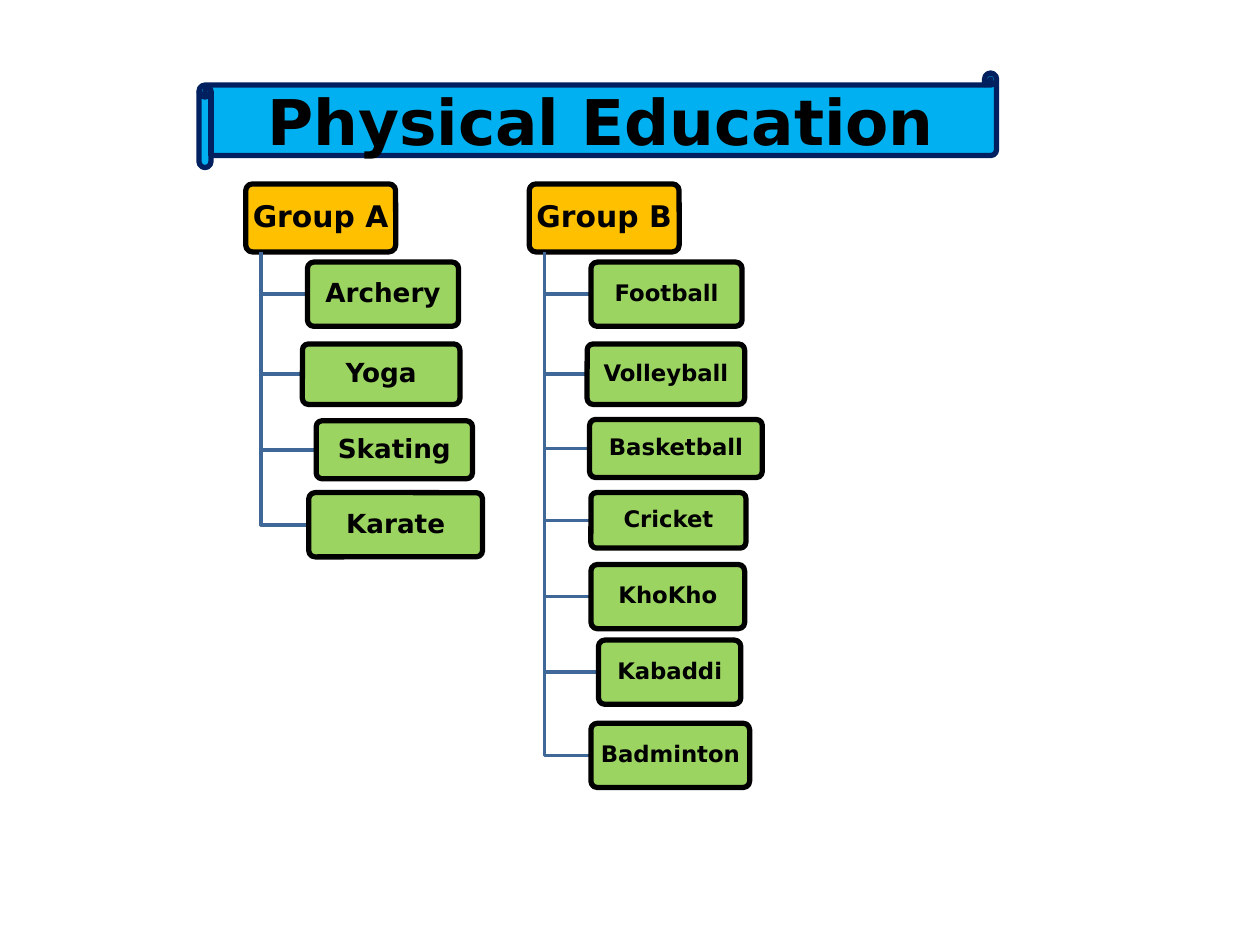
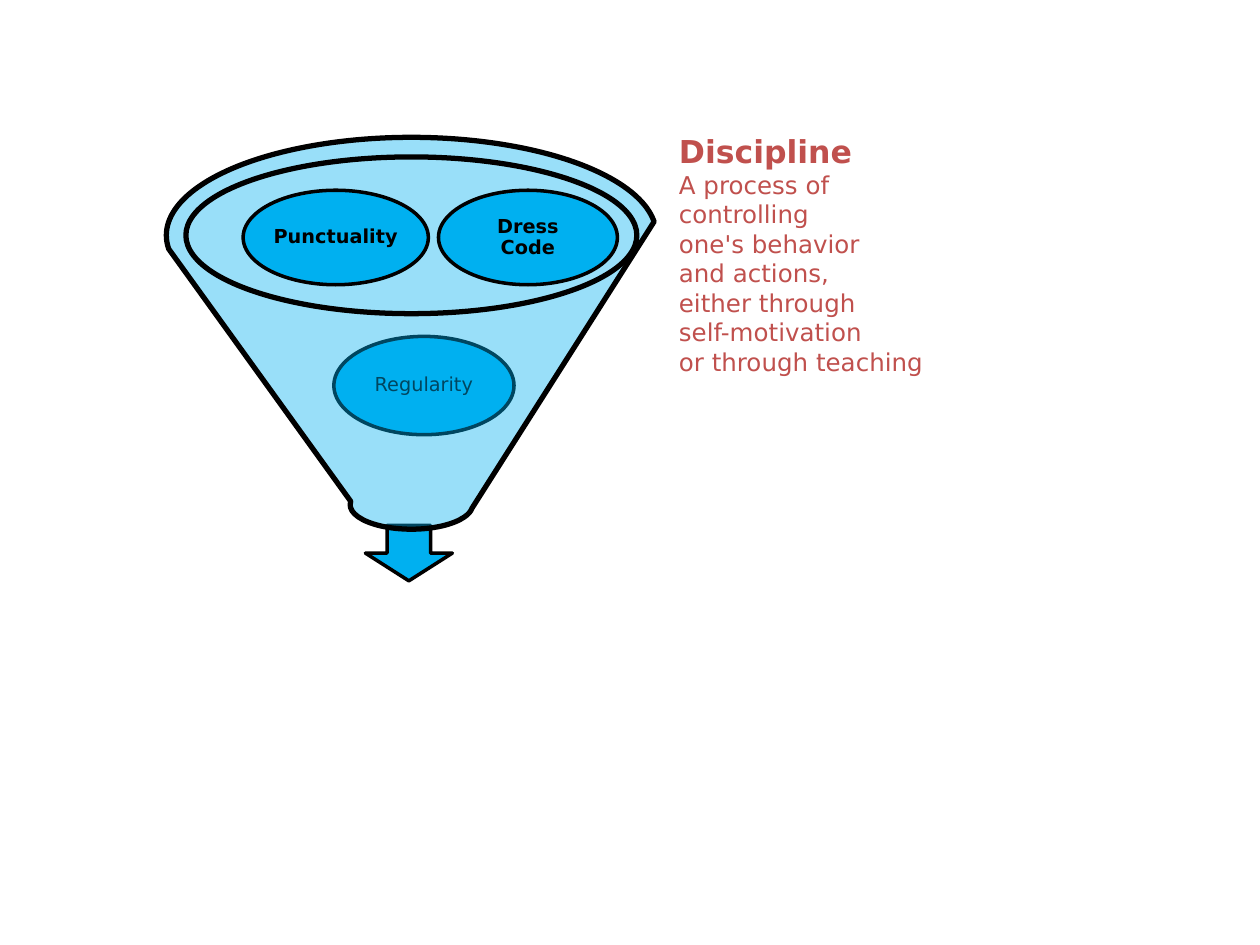
from dataclasses import dataclass

from lxml import etree
from pptx import Presentation
from pptx.dml.color import RGBColor
from pptx.enum.shapes import MSO_SHAPE
from pptx.enum.text import MSO_ANCHOR, PP_ALIGN
from pptx.oxml.ns import qn
from pptx.util import Inches, Pt

ROUNDED = MSO_SHAPE.ROUNDED_RECTANGLE
SCROLL = MSO_SHAPE.HORIZONTAL_SCROLL
OVAL = MSO_SHAPE.OVAL
DOWN_ARROW = MSO_SHAPE.DOWN_ARROW
FUNNEL = MSO_SHAPE.FUNNEL
CENTER = PP_ALIGN.CENTER
LEFT = PP_ALIGN.LEFT
MIDDLE = MSO_ANCHOR.MIDDLE

SLIDE_WIDTH, SLIDE_HEIGHT = Inches(10), Inches(7.5)
COLUMNS, ROWS = 100, 75


@dataclass(frozen=True)
class Theme:
    font: str = "DejaVu Sans"
    ink: str = "000000"
    sky: str = "00B0F0"
    navy: str = "002060"
    gold: str = "FFC000"
    green: str = "92D050"
    branch: str = "3F6797"
    red: str = "C0504D"
    title_size: int = 36
    heading_size: int = 18
    group_size: int = 17
    sport_size_a: int = 15
    sport_size_b: int = 13
    body_size: int = 14
    bubble_size: int = 11
    heavy_line: int = 3
    light_line: int = 2


THEME = Theme()

# Group: name, left column, sport text size, sports.
# Sport: name, offset from the group's left, top row, width, height.
GROUPS = [
    ("Group A", 19.5, THEME.sport_size_a, [
        ("Archery", 4.9, 20.8, 12, 5.1),
        ("Yoga", 4.5, 27.3, 12.5, 4.8),
        ("Skating", 5.6, 33.4, 12.4, 4.6),
        ("Karate", 5, 39.1, 13.8, 5.1),
    ]),
    ("Group B", 42, THEME.sport_size_b, [
        ("Football", 4.9, 20.8, 12, 5.1),
        ("Volleyball", 4.6, 27.3, 12.5, 4.8),
        ("Basketball", 4.8, 33.3, 13.7, 4.6),
        ("Cricket", 4.9, 39.1, 12.3, 4.4),
        ("KhoKho", 4.9, 44.8, 12.2, 5.1),
        ("Kabaddi", 5.5, 50.8, 11.3, 5.1),
        ("Badminton", 4.9, 57.4, 12.6, 5.1),
    ]),
]
GROUP_TOP, GROUP_WIDTH, GROUP_HEIGHT = 14.6, 11.9, 5.4
TRUNK_OFFSET = 1.2

# Bubble: text, bold, left, top, width, height.
BUBBLES = [
    ("Dress Code", True, 34.8, 15.1, 14.2, 7.5),
    ("Punctuality", True, 19.3, 15.1, 14.7, 7.5),
    ("Regularity", False, 26.5, 26.7, 14.3, 7.8),
]

DISCIPLINE_LINES = [
    "A process of", "controlling", "one's behavior", "and actions,",
    "either through", "self-motivation", "or through teaching",
]


def across(columns):
    return round(SLIDE_WIDTH * columns / COLUMNS)


def down(rows):
    return round(SLIDE_HEIGHT * rows / ROWS)


def place(left, top, width, height):
    return across(left), down(top), across(width), down(height)


def add_panel(slide, kind, area, fill, line=None, weight=THEME.heavy_line,
              opacity=100, corner=None):
    """Add a flat preset shape; area is left, top, width, height on the grid."""
    shape = slide.shapes.add_shape(kind, *place(*area))
    shape.shadow.inherit = False
    shape.fill.solid()
    shape.fill.fore_color.rgb = RGBColor.from_string(fill)
    if opacity < 100:
        color = shape.fill._xPr.find(".//" + qn("a:srgbClr"))
        etree.SubElement(color, qn("a:alpha")).set("val", str(opacity * 1000))
    if line:
        shape.line.color.rgb = RGBColor.from_string(line)
        shape.line.width = Pt(weight)
    else:
        shape.line.fill.background()
    if corner is not None:
        shape.adjustments[0] = corner
    return shape


def add_run(paragraph, text, size, color=THEME.ink, bold=True, align=CENTER):
    paragraph.alignment = align
    run = paragraph.add_run()
    run.text = text
    run.font.name = THEME.font
    run.font.size = Pt(size)
    run.font.bold = bold
    run.font.color.rgb = RGBColor.from_string(color)


def add_label(shape, text, size, inset, bold=True):
    """Centre a tight label inside a diagram shape."""
    frame = shape.text_frame
    frame.word_wrap = True
    frame.vertical_anchor = MIDDLE
    frame.margin_left = frame.margin_right = Inches(inset)
    frame.margin_top = frame.margin_bottom = Inches(0.02)
    paragraph = frame.paragraphs[0]
    paragraph.line_spacing = 0.9
    add_run(paragraph, text, size, bold=bold)


def add_branch(slide, trunk, top, middle, end):
    """Draw the elbow from a group box down and across to a sport box."""
    builder = slide.shapes.build_freeform(across(trunk), down(top))
    builder.add_line_segments(
        [(across(trunk), down(middle)), (across(end), down(middle))], close=False)
    elbow = builder.convert_to_shape()
    elbow.shadow.inherit = False
    elbow.fill.background()
    elbow.line.color.rgb = RGBColor.from_string(THEME.branch)
    elbow.line.width = Pt(THEME.light_line)


def add_group(slide, name, left, sport_size, sports):
    box = add_panel(slide, ROUNDED, (left, GROUP_TOP, GROUP_WIDTH, GROUP_HEIGHT),
                    THEME.gold, THEME.ink, corner=0.1)
    add_label(box, name, THEME.group_size, 0.04)
    for sport, offset, top, width, height in sports:
        add_branch(slide, left + TRUNK_OFFSET, GROUP_TOP + GROUP_HEIGHT,
                   top + height / 2, left + offset)
        box = add_panel(slide, ROUNDED, (left + offset, top, width, height),
                        THEME.green, THEME.ink, opacity=90, corner=0.1)
        add_label(box, sport, sport_size, 0.03)


def add_title_scroll(slide, text):
    scroll = add_panel(slide, SCROLL, (15.8, 5.8, 63.3, 7.5),
                       THEME.sky, THEME.navy, corner=0.127)
    scroll.text_frame.vertical_anchor = MIDDLE
    add_run(scroll.text_frame.paragraphs[0], text, THEME.title_size)


def add_funnel(slide):
    add_panel(slide, OVAL, (14.8, 12.6, 35.8, 12.4), THEME.sky, opacity=40)
    add_panel(slide, DOWN_ARROW, (29, 41.7, 6.9, 4.4),
              THEME.sky, THEME.ink, THEME.light_line)
    for text, bold, *area in BUBBLES:
        bubble = add_panel(slide, OVAL, area, THEME.sky, THEME.ink, THEME.light_line)
        add_label(bubble, text, THEME.bubble_size, 0.02, bold)
    add_panel(slide, FUNNEL, (13.2, 10.9, 38.9, 31.1),
              THEME.sky, THEME.ink, opacity=40)


def add_definition(slide, heading, lines):
    frame = slide.shapes.add_textbox(*place(52.9, 10, 46, 19.5)).text_frame
    frame.word_wrap = True
    add_run(frame.paragraphs[0], heading, THEME.heading_size, THEME.red, align=LEFT)
    for line in lines:
        add_run(frame.add_paragraph(), line, THEME.body_size, THEME.red, False, LEFT)


def main():
    presentation = Presentation()
    presentation.slide_width = SLIDE_WIDTH
    presentation.slide_height = SLIDE_HEIGHT
    blank = presentation.slide_layouts[6]

    education = presentation.slides.add_slide(blank)
    for group in GROUPS:
        add_group(education, *group)
    add_title_scroll(education, "Physical Education")

    discipline = presentation.slides.add_slide(blank)
    add_funnel(discipline)
    add_definition(discipline, "Discipline", DISCIPLINE_LINES)

    presentation.save("out.pptx")


if __name__ == "__main__":
    main()
